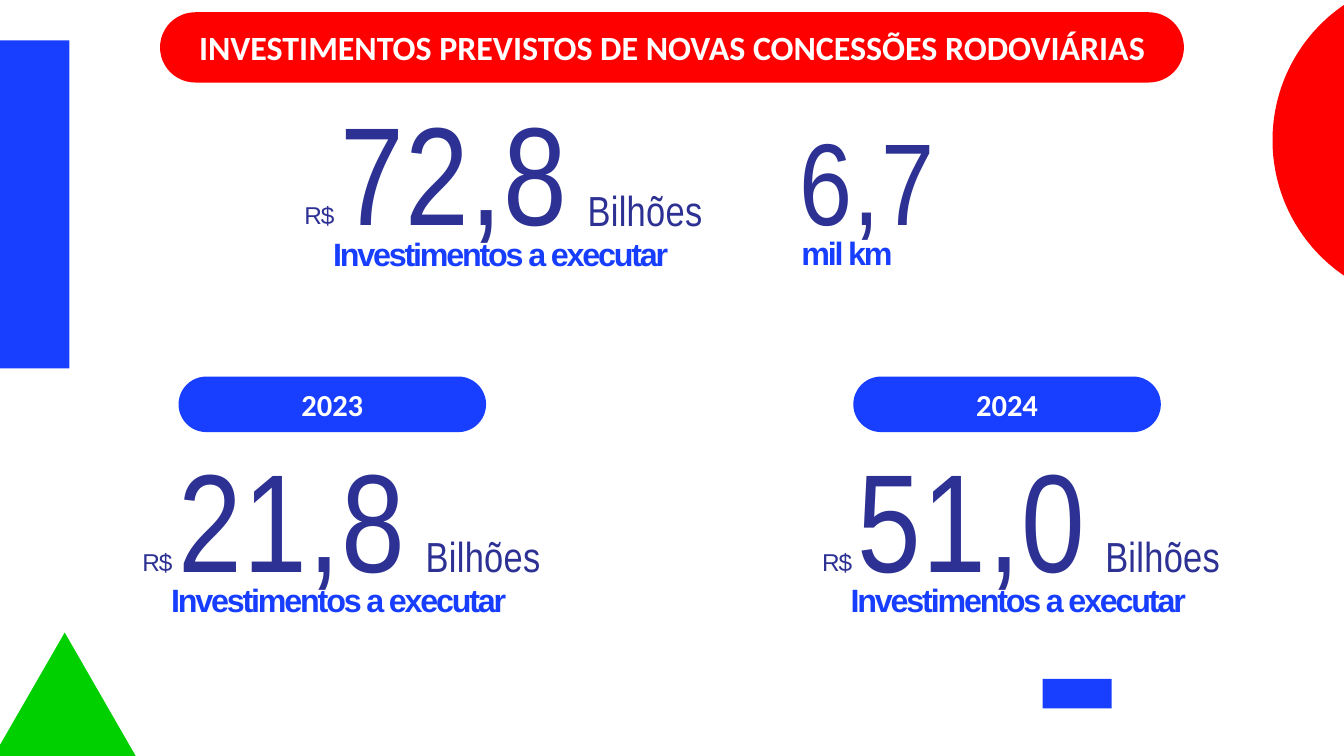
import math

import pptx
import pptx.dml.color
import pptx.enum.shapes
import pptx.enum.text
import pptx.util

Cm = pptx.util.Cm
Pt = pptx.util.Pt
RGBColor = pptx.dml.color.RGBColor
Shape = pptx.enum.shapes.MSO_SHAPE
Align = pptx.enum.text.PP_ALIGN
Anchor = pptx.enum.text.MSO_ANCHOR

WIDTH, HEIGHT = 55.85, 31.42
WHITE = RGBColor(0xFF, 0xFF, 0xFF)
RED = RGBColor(0xFF, 0x00, 0x00)
BLUE = RGBColor(0x18, 0x3E, 0xFF)
LABEL_BLUE = RGBColor(0x17, 0x3E, 0xFF)
NAVY = RGBColor(0x2D, 0x31, 0x93)
GREEN = RGBColor(0x00, 0xD0, 0x00)


def write(para, text, *, size, font, color, bold=False, spacing=0, baseline=0):
    """Add a run; spacing is in points and baseline in percent."""
    span = para.add_run()
    span.text = text
    span.font.size = Pt(size)
    span.font.name = font
    span.font.bold = bold
    span.font.color.rgb = color
    properties = span.font._element
    if spacing:
        properties.set("spc", str(round(spacing * 100)))
    if baseline:
        properties.set("baseline", str(round(baseline * 1000)))


class InvestmentPage:
    """The current slide with the styles of its figures and headings."""

    unit = dict(size=49.5, color=NAVY)
    label_style = dict(size=38, font="Arial", color=LABEL_BLUE, bold=True, spacing=-2.6)
    figure_style = dict(font="Arial Narrow", color=NAVY, spacing=1.8)
    heading_style = dict(font="Calibri", color=WHITE, bold=True)

    def __init__(self, deck):
        self.shapes = deck.slides.add_slide(deck.slide_layouts[6]).shapes

    def paint(self, shape, color):
        shape.shadow.inherit = False
        shape.fill.solid()
        shape.fill.fore_color.rgb = color
        shape.line.fill.background()

    def block(self, kind, left, top, width, height, color):
        shape = self.shapes.add_shape(kind, Cm(left), Cm(top), Cm(width), Cm(height))
        self.paint(shape, color)
        return shape

    def outline(self, points, color):
        corners = [(Cm(x), Cm(y)) for x, y in points]
        builder = self.shapes.build_freeform(*corners[0])
        builder.add_line_segments(corners[1:], close=True)
        self.paint(builder.convert_to_shape(), color)

    def pill(self, left, top, width, height, color):
        self.block(Shape.ROUNDED_RECTANGLE, left, top, width, height, color).adjustments[0] = 0.5

    def text_box(self, left, top, width, height, *, align=Align.LEFT,
                 anchor=Anchor.TOP, insets=(0, 0.05, 0, 0)):
        """Add a text box and return its first paragraph."""
        box = self.shapes.add_textbox(Cm(left), Cm(top), Cm(width), Cm(height))
        frame = box.text_frame
        frame.word_wrap = True
        frame.auto_size = pptx.enum.text.MSO_AUTO_SIZE.SHAPE_TO_FIT_TEXT
        frame.vertical_anchor = anchor
        (frame.margin_left, frame.margin_top,
         frame.margin_right, frame.margin_bottom) = map(Cm, insets)
        para = frame.paragraphs[0]
        para.alignment = align
        return para

    def title(self, text):
        self.pill(6.65, 0.51, 42.55, 2.92, RED)
        para = self.text_box(8.03, 1.04, 39.8, 1.75, align=Align.CENTER)
        write(para, text, size=40, **self.heading_style)

    def year(self, left, text):
        self.pill(left, 15.65, 12.78, 2.31, BLUE)
        para = self.text_box(left + 0.6, 15.88, 11.58, 1.83, align=Align.CENTER,
                             anchor=Anchor.MIDDLE, insets=(0.15,) * 4)
        write(para, text, size=36, **self.heading_style)

    def investment(self, left, top, amount):
        para = self.text_box(left, top, 12.47, 7.09)
        write(para, "R$ ", font="Arial", spacing=-1.2, baseline=2, **self.unit)
        write(para, amount, size=164.5, **self.figure_style)
        para = self.text_box(left + 11.77, top + 4.08, 5.64, 2.16)
        write(para, "Bilhões", font="Arial Narrow", spacing=0.4, **self.unit)
        para = self.text_box(left - 0.18, top + 6.06, 16.66, 1.88, align=Align.CENTER,
                             insets=(0.25, 0.13, 0.25, 0.13))
        write(para, "Investimentos a executar", **self.label_style)

    def road_length(self, amount, unit):
        para = self.text_box(33.22, 4.5, 7.49, 5.92)
        write(para, amount, size=137, **self.figure_style)
        para = self.text_box(33.3, 9.63, 5.64, 1.65)
        write(para, unit, **self.label_style)

    def decoration(self):
        center_x, center_y, radius = 59.69, 5.83, 6.81
        half_angle = math.acos((center_x - WIDTH) / radius)
        steps = 60
        angles = [half_angle * (2 * step / steps - 1) for step in range(steps + 1)]
        self.outline([(center_x - radius * math.cos(angle),
                       center_y + radius * math.sin(angle)) for angle in angles], RED)
        self.block(Shape.RECTANGLE, 0, 1.68, 2.88, 13.63, BLUE)
        self.outline([(2.69, 26.29), (0, 30.96), (0, HEIGHT), (5.64, HEIGHT)], GREEN)

    def emblem(self):
        self.block(Shape.RECTANGLE, 43.33, 28.22, 2.87, 1.22, BLUE)


def main():
    deck = pptx.Presentation()
    deck.slide_width, deck.slide_height = Cm(WIDTH), Cm(HEIGHT)
    page = InvestmentPage(deck)
    page.emblem()
    page.decoration()
    page.title("INVESTIMENTOS PREVISTOS DE NOVAS CONCESSÕES RODOVIÁRIAS")
    page.investment(12.65, 3.53, "72,8")
    for year, pill_left, figure_left, amount in (
        ("2023", 7.42, 5.92, "21,8"),
        ("2024", 35.46, 34.16, "51,0"),
    ):
        page.year(pill_left, year)
        page.investment(figure_left, 17.93, amount)
    page.road_length("6,7", "mil km")
    deck.save("out.pptx")


if __name__ == "__main__":
    main()
